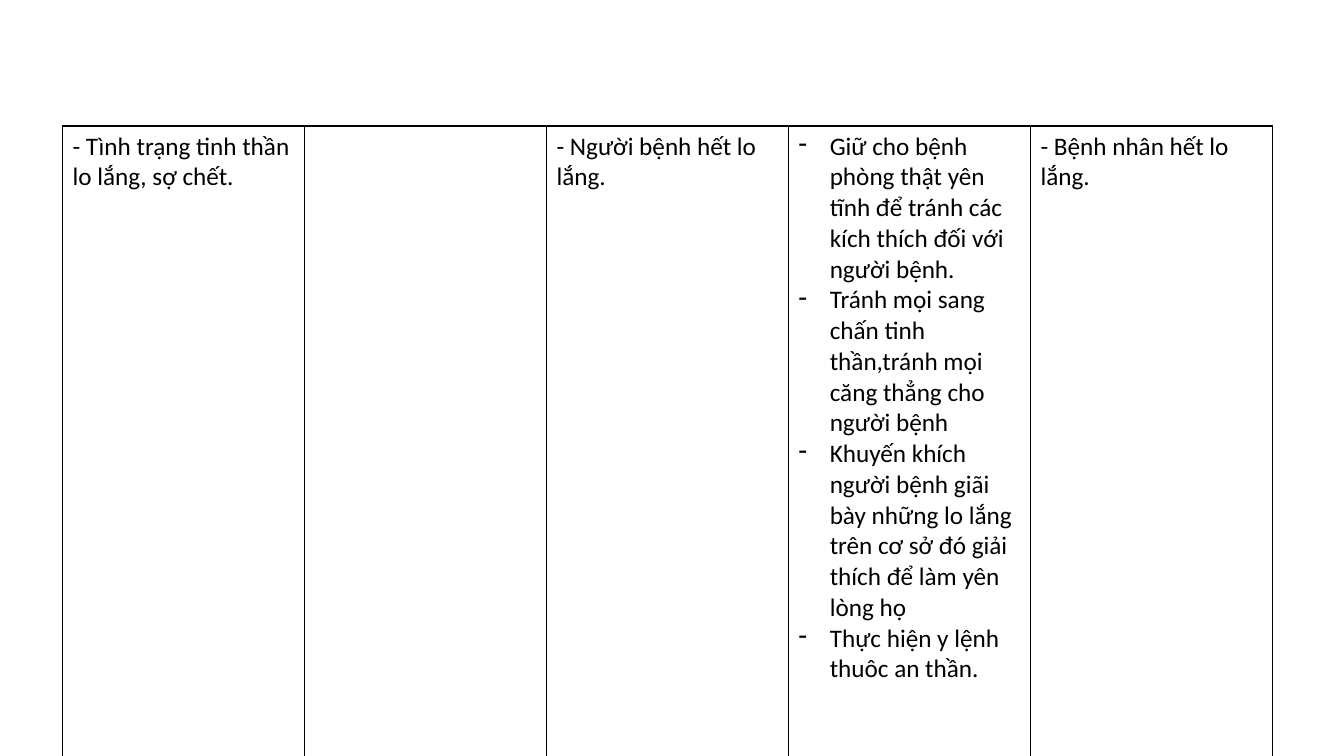
from pptx import Presentation
from pptx.dml.color import RGBColor
from pptx.oxml import parse_xml
from pptx.oxml.ns import nsdecls
from pptx.util import Inches, Pt

COLORS = {"text": "000000", "border": "000000"}
FONT = "Calibri"
COLUMN_WIDTH = 2.4
ROW_HEIGHTS = [6.55, 2.98, 2.98]
INDENT = Inches(0.31)

# Column number: (has dash bullets, paragraphs)
CARE_PLAN = {
    0: (False, ["- Tình trạng tinh thần lo lắng, sợ chết."]),
    2: (False, ["- Người bệnh hết lo lắng."]),
    3: (True, [
        "Giữ cho bệnh phòng thật yên tĩnh để tránh các kích thích đối với người bệnh.",
        "Tránh mọi sang chấn tinh thần,tránh mọi căng thẳng cho người bệnh",
        "Khuyến khích người bệnh giãi bày những lo lắng trên cơ sở đó giải thích để làm yên lòng họ",
        "Thực hiện y lệnh thuôc an thần.",
    ]),
    4: (False, ["- Bệnh nhân hết lo lắng."]),
}


def add_borders(cell):
    properties = cell._tc.get_or_add_tcPr()
    for position, side in enumerate(["lnL", "lnR", "lnT", "lnB"]):
        properties.insert(position, parse_xml(
            f'<a:{side} {nsdecls("a")} w="{Pt(1)}"><a:solidFill>'
            f'<a:srgbClr val="{COLORS["border"]}"/></a:solidFill></a:{side}>'))


def write_paragraph(para, words, bullet=False):
    if bullet:
        properties = para._p.get_or_add_pPr()
        properties.set("marL", str(INDENT))
        properties.set("indent", str(-INDENT))
        properties.append(parse_xml(f'<a:buChar {nsdecls("a")} char="-"/>'))
    span = para.add_run()
    span.text = words
    span.font.name = FONT
    span.font.size = Pt(18)
    span.font.color.rgb = RGBColor.from_string(COLORS["text"])


deck = Presentation()
deck.slide_width = Inches(13.33)
deck.slide_height = Inches(7.5)
page = deck.slides.add_slide(deck.slide_layouts[6])

table = page.shapes.add_table(
    len(ROW_HEIGHTS), 5, Inches(0.62), Inches(1.25),
    Inches(5 * COLUMN_WIDTH), Inches(sum(ROW_HEIGHTS))).table
table.first_row = False
table.horz_banding = False
for column in table.columns:
    column.width = Inches(COLUMN_WIDTH)
for row, height in zip(table.rows, ROW_HEIGHTS):
    row.height = Inches(height)
for cell in table.iter_cells():
    cell.fill.background()
    add_borders(cell)

for column_number, (bullet, paragraphs) in CARE_PLAN.items():
    frame = table.cell(0, column_number).text_frame
    for number, words in enumerate(paragraphs):
        para = frame.add_paragraph() if number else frame.paragraphs[0]
        write_paragraph(para, words, bullet=bullet)

deck.save("out.pptx")
